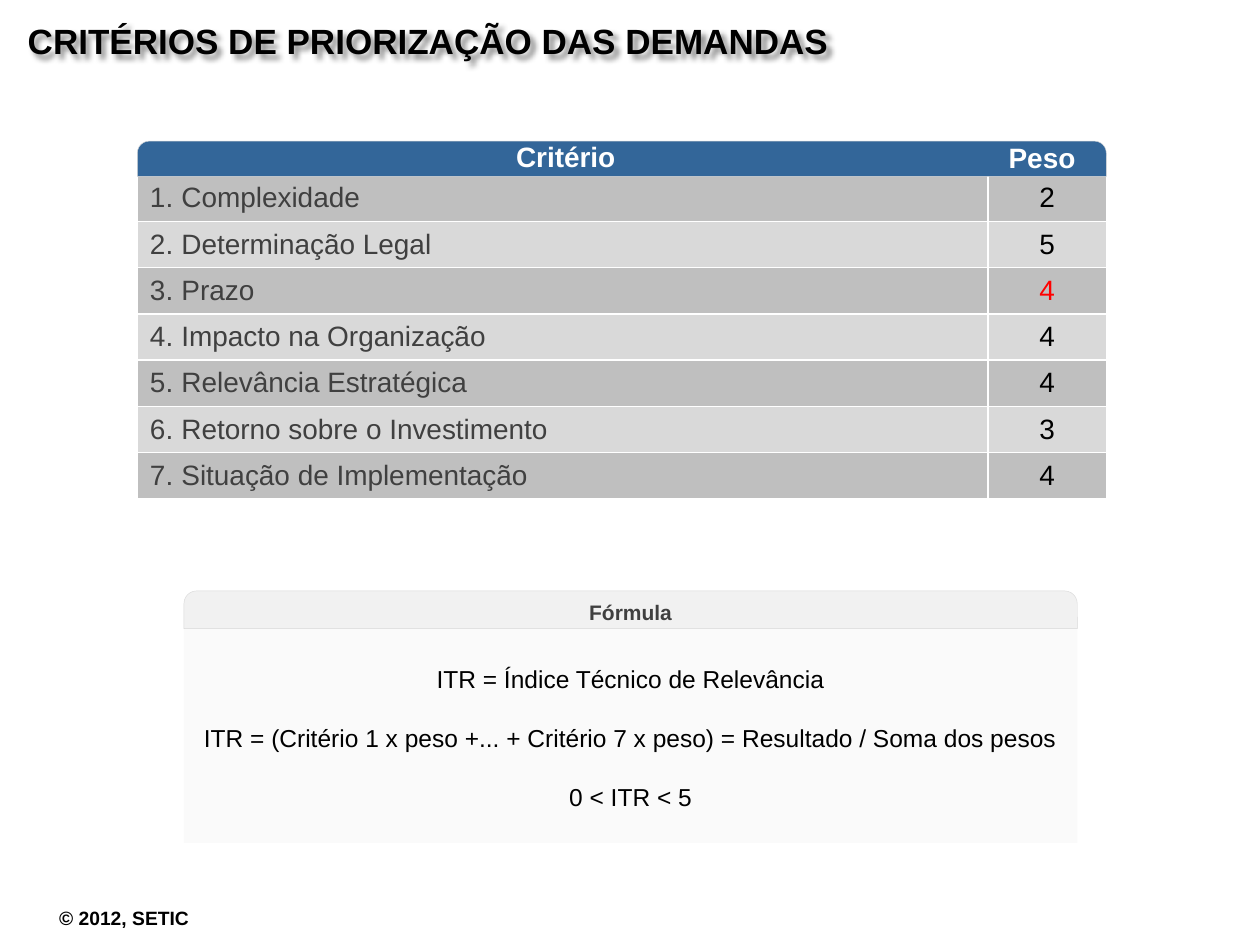
from lxml.etree import SubElement
from pptx import Presentation
from pptx.dml.color import RGBColor
from pptx.enum.shapes import MSO_SHAPE
from pptx.enum.text import MSO_ANCHOR, MSO_AUTO_SIZE, PP_ALIGN
from pptx.oxml.ns import qn
from pptx.util import Inches, Pt

TITLE = "CRITÉRIOS DE PRIORIZAÇÃO DAS DEMANDAS"
HEADERS = [("Critério", (1.07, 1.06, 6.84, 0.37)), ("Peso", (7.76, 1.07, 1.02, 0.37))]
CRITERIA = [
    ("Complexidade", 2, "black"),
    ("Determinação Legal", 5, "black"),
    ("Prazo", 4, "red"),
    ("Impacto na Organização", 4, "black"),
    ("Relevância Estratégica", 4, "black"),
    ("Retorno sobre o Investimento", 3, "black"),
    ("Situação de Implementação", 4, "black"),
]
FORMULA_TITLE = "Fórmula"
FORMULA_LINES = [
    "ITR = Índice Técnico de Relevância",
    "ITR = (Critério 1 x peso +... + Critério 7 x peso) = Resultado / Soma dos pesos",
    "0 < ITR < 5",
]
FOOTER = "© 2012, SETIC"
COLORS = {
    "black": "000000", "white": "FFFFFF", "red": "FF0000", "text": "404040",
    "header": "336699", "dark_row": "BFBFBF", "light_row": "D9D9D9",
    "border": "D9D9D9", "panel": "A6A6A6",
}
FONT = "Arial"
TABLE_LEFT, TABLE_TOP, TABLE_WIDTH, TABLE_HEIGHT = 1.09, 1.39, 7.69, 2.57
COLUMN_WIDTHS = (6.75, 0.94)
FORMULA_LEFT, FORMULA_TOP, FORMULA_WIDTH = 1.46, 4.69, 7.09
FORMULA_HEADER_HEIGHT, FORMULA_BODY_HEIGHT = 0.3, 1.7


def color(name):
    return RGBColor.from_string(COLORS[name])


def box(left, top, width, height):
    return Inches(left), Inches(top), Inches(width), Inches(height)


def format_paragraph(paragraph, size, color_name, bold=False, align=PP_ALIGN.LEFT):
    paragraph.alignment = align
    for run in paragraph.runs:
        run.font.name = FONT
        run.font.size = Pt(size)
        run.font.bold = bold
        run.font.color.rgb = color(color_name)


def add_label(slide, text, area, size, color_name, align, wrap=True):
    label = slide.shapes.add_textbox(*box(*area))
    label.text_frame.word_wrap = wrap
    label.text_frame.text = text
    format_paragraph(label.text_frame.paragraphs[0], size, color_name, True, align)


def add_panel(slide, kind, area, fill, opacity=100, outlined=False):
    panel = slide.shapes.add_shape(kind, *box(*area))
    panel.shadow.inherit = False
    panel.fill.solid()
    panel.fill.fore_color.rgb = color(fill)
    if opacity < 100:
        fill_color = panel.fill._xPr.find(qn("a:solidFill"))[0]
        SubElement(fill_color, qn("a:alpha"), val=str(opacity * 1000))
    if outlined:
        panel.adjustments[0] = 0.335
        panel.line.color.rgb = color("border")
        panel.line.width = Pt(0.25)
    else:
        panel.line.fill.background()
    return panel


def add_title(slide):
    title = slide.shapes.title
    title.left, title.top, title.width, title.height = box(0.12, 0.05, 8.75, 0.55)
    title.text_frame.text = TITLE
    title.text_frame.auto_size = MSO_AUTO_SIZE.NONE
    title.text_frame.vertical_anchor = MSO_ANCHOR.MIDDLE
    format_paragraph(title.text_frame.paragraphs[0], 20, "black", True)
    effects = SubElement(title._element.spPr, qn("a:effectLst"))
    shadow = SubElement(effects, qn("a:outerShdw"), blurRad="38100", dist="38100", dir="2700000")
    shadow_color = SubElement(shadow, qn("a:srgbClr"), val=COLORS["black"])
    SubElement(shadow_color, qn("a:alpha"), val="43000")


def add_number(paragraph, number):
    properties = paragraph._p.get_or_add_pPr()
    properties.set("marL", str(Inches(0.25)))
    properties.set("indent", str(-Inches(0.25)))
    SubElement(properties, qn("a:buFont"), typeface=FONT)
    SubElement(properties, qn("a:buAutoNum"), type="arabicPeriod", startAt=str(number))


def set_borders(cell):
    properties = cell._tc.get_or_add_tcPr()
    for position, side in enumerate(("a:lnL", "a:lnR", "a:lnT", "a:lnB")):
        line = SubElement(properties, qn(side), w=str(Pt(1)))
        fill = SubElement(line, qn("a:solidFill"))
        SubElement(fill, qn("a:srgbClr"), val=COLORS["white"])
        properties.insert(position, line)


def add_criteria_table(slide):
    area = box(TABLE_LEFT, TABLE_TOP, TABLE_WIDTH, TABLE_HEIGHT)
    table = slide.shapes.add_table(len(CRITERIA), len(COLUMN_WIDTHS), *area).table
    table.first_row = False
    table.horz_banding = False
    for column, width in zip(table.columns, COLUMN_WIDTHS):
        column.width = Inches(width)
    for index, (name, weight, weight_color) in enumerate(CRITERIA):
        contents = [(name, "text", PP_ALIGN.LEFT), (str(weight), weight_color, PP_ALIGN.CENTER)]
        for column_index, (text, text_color, align) in enumerate(contents):
            cell = table.cell(index, column_index)
            cell.text_frame.text = text
            cell.vertical_anchor = MSO_ANCHOR.MIDDLE
            cell.fill.solid()
            cell.fill.fore_color.rgb = color("light_row" if index % 2 else "dark_row")
            set_borders(cell)
            paragraph = cell.text_frame.paragraphs[0]
            if column_index == 0:
                add_number(paragraph, index + 1)
            format_paragraph(paragraph, 16, text_color, align=align)


def add_formula(slide):
    header = add_panel(
        slide, MSO_SHAPE.ROUND_2_SAME_RECTANGLE,
        (FORMULA_LEFT, FORMULA_TOP, FORMULA_WIDTH, FORMULA_HEADER_HEIGHT), "panel", 15, True)
    frame = header.text_frame
    frame.margin_left = frame.margin_right = frame.margin_top = frame.margin_bottom = Inches(0.04)
    frame.vertical_anchor = MSO_ANCHOR.MIDDLE
    frame.text = FORMULA_TITLE
    format_paragraph(frame.paragraphs[0], 12, "text", True, PP_ALIGN.CENTER)

    body_top = FORMULA_TOP + FORMULA_HEADER_HEIGHT
    body = add_panel(
        slide, MSO_SHAPE.RECTANGLE,
        (FORMULA_LEFT, body_top, FORMULA_WIDTH, FORMULA_BODY_HEIGHT), "panel", 5)
    body.text_frame.vertical_anchor = MSO_ANCHOR.TOP
    body.text_frame.margin_top = Inches(0.28)
    body.text_frame.text = "\n".join(FORMULA_LINES)
    for index, paragraph in enumerate(body.text_frame.paragraphs):
        if index:
            paragraph.space_before = Pt(17)
        format_paragraph(paragraph, 14, "black", align=PP_ALIGN.CENTER)


def main():
    presentation = Presentation()
    presentation.slide_width, presentation.slide_height = Inches(10), Inches(7.5)
    slide = presentation.slides.add_slide(presentation.slide_layouts[5])
    add_label(slide, FOOTER, (0.37, 7.14, 1.28, 0.29), 11, "black", PP_ALIGN.LEFT, False)
    add_criteria_table(slide)
    add_panel(slide, MSO_SHAPE.ROUND_2_SAME_RECTANGLE,
              (TABLE_LEFT, 1.12, TABLE_WIDTH, 0.28), "header", outlined=True)
    for text, area in HEADERS:
        add_label(slide, text, area, 16, "white", PP_ALIGN.CENTER)
    add_title(slide)
    add_formula(slide)
    presentation.save("out.pptx")


if __name__ == "__main__":
    main()
